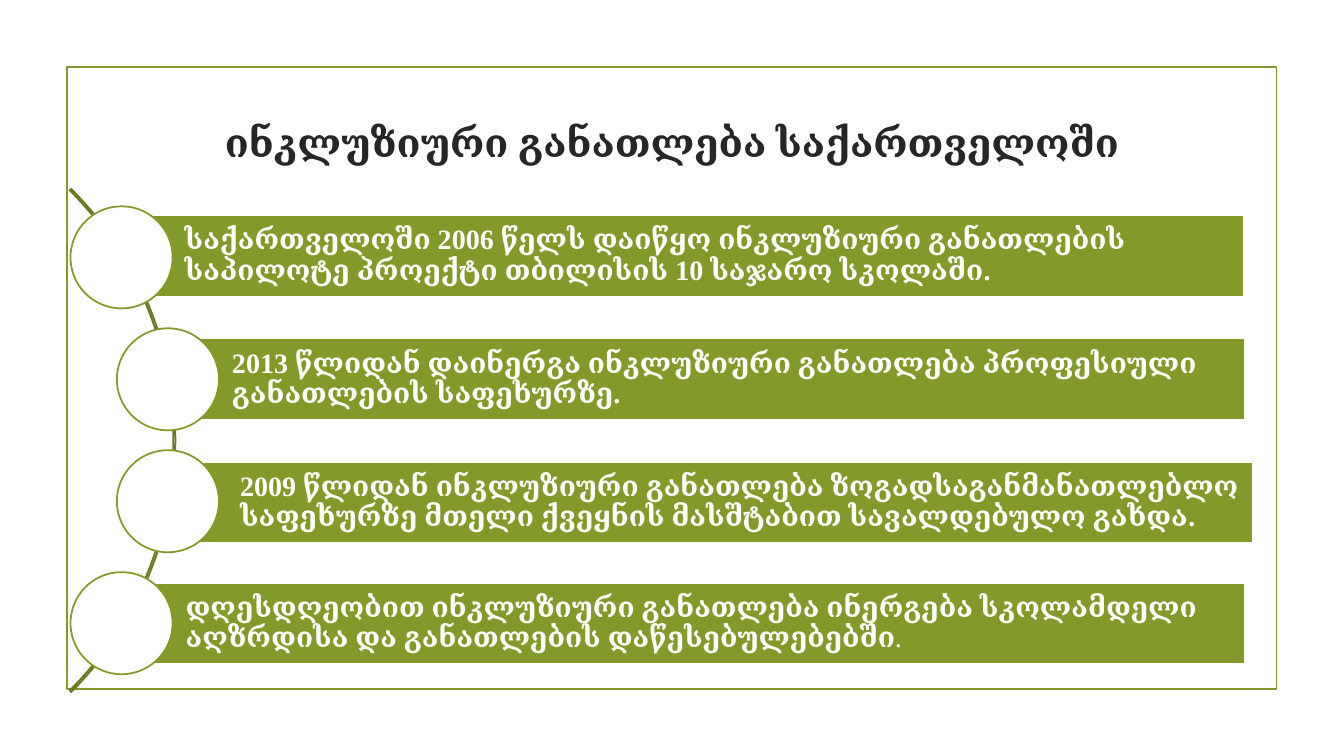
from pptx import Presentation
from pptx.dml.color import RGBColor
from pptx.enum.shapes import MSO_SHAPE as Shape
from pptx.enum.text import MSO_ANCHOR as Anchor, MSO_AUTO_SIZE as AutoSize, PP_ALIGN as Align
from pptx.util import Pt

FONT = "Times New Roman"
GREEN, DARK_GREEN, WHITE, DARK = "83992A", "697B22", "FFFFFF", "262626"
TITLE = "ინკლუზიური განათლება საქართველოში"
CIRCLE_TOP, CIRCLE_STEP, CIRCLE_SIZE = 147.4, 87.1, 72.9
BAR_HEIGHT = 58.2
MILESTONES = [
    (50.4, 85.7, 153.6, 802.8,
     ["საქართველოში 2006 წელს დაიწყო ინკლუზიური განათლების საპილოტე პროექტი თბილისის 10 საჯარო სკოლაში."]),
    (83.5, 119.5, 241.7, 769.7,
     ["2013 წლიდან დაინერგა ინკლუზიური განათლება პროფესიული განათლების საფეხურზე."]),
    (83.5, 125.3, 329.9, 769.7,
     ["2009 წლიდან ინკლუზიური განათლება ზოგადსაგანმანათლებლო საფეხურზე მთელი ქვეყნის მასშტაბით სავალდებულო გახდა."]),
    (50.4, 86.4, 416.2, 802.8,
     ["დღესდღეობით ინკლუზიური განათლება ინერგება სკოლამდელი აღზრდისა და განათლების დაწესებულებებში", "."]),
]


def color(value):
    return RGBColor.from_string(value)


def add_outline(slide, kind, left, top, width, height, line, fill=None):
    shape = slide.shapes.add_shape(kind, Pt(left), Pt(top), Pt(width), Pt(height))
    shape.shadow.inherit = False
    if fill:
        shape.fill.solid()
        shape.fill.fore_color.rgb = color(fill)
    else:
        shape.fill.background()
    shape.line.color.rgb = color(line)
    shape.line.width = Pt(1.25)
    return shape


def format_run(span, size, value, bold=True):
    span.font.name = FONT
    span.font.size = Pt(size)
    span.font.bold = bold
    span.font.color.rgb = color(value)


def set_title(slide):
    title = slide.shapes.title
    title.left, title.top, title.width, title.height = Pt(102), Pt(77), Pt(756), Pt(48)
    frame = title.text_frame
    frame.text = TITLE
    frame.word_wrap = True
    frame.auto_size = AutoSize.NONE
    frame.vertical_anchor = Anchor.MIDDLE
    para = frame.paragraphs[0]
    para.alignment = Align.CENTER
    format_run(para.runs[0], 28, DARK)


def add_bar(slide, left, top, width, texts):
    bar = add_outline(slide, Shape.RECTANGLE, left, top, width, BAR_HEIGHT, WHITE, GREEN)
    frame = bar.text_frame
    frame.word_wrap = True
    frame.vertical_anchor = Anchor.MIDDLE
    frame.margin_left = Pt(46.2)
    frame.margin_top = frame.margin_right = frame.margin_bottom = Pt(4)
    para = frame.paragraphs[0]
    para.alignment = Align.LEFT
    para.line_spacing = 0.9
    for index, text in enumerate(texts):
        span = para.add_run()
        span.text = text
        format_run(span, 20, WHITE, bold=index == 0)


def add_arc(slide):
    arc = add_outline(slide, Shape.BLOCK_ARC, -383, 60.5, 508.3, 508.3, DARK_GREEN)
    for index, value in enumerate((189, 27, 0.003)):
        arc.adjustments[index] = value


def main():
    deck = Presentation()
    deck.slide_width, deck.slide_height = Pt(960), Pt(540)
    slide = deck.slides.add_slide(deck.slide_layouts[5])
    add_outline(slide, Shape.RECTANGLE, 47.8, 48, 864, 444.2, GREEN)
    set_title(slide)
    add_arc(slide)
    for index, (circle_left, bar_left, bar_top, bar_width, texts) in enumerate(MILESTONES):
        add_bar(slide, bar_left, bar_top, bar_width, texts)
        add_outline(slide, Shape.OVAL, circle_left, CIRCLE_TOP + index * CIRCLE_STEP,
                    CIRCLE_SIZE, CIRCLE_SIZE, GREEN, WHITE)
    deck.save("out.pptx")


if __name__ == "__main__":
    main()
